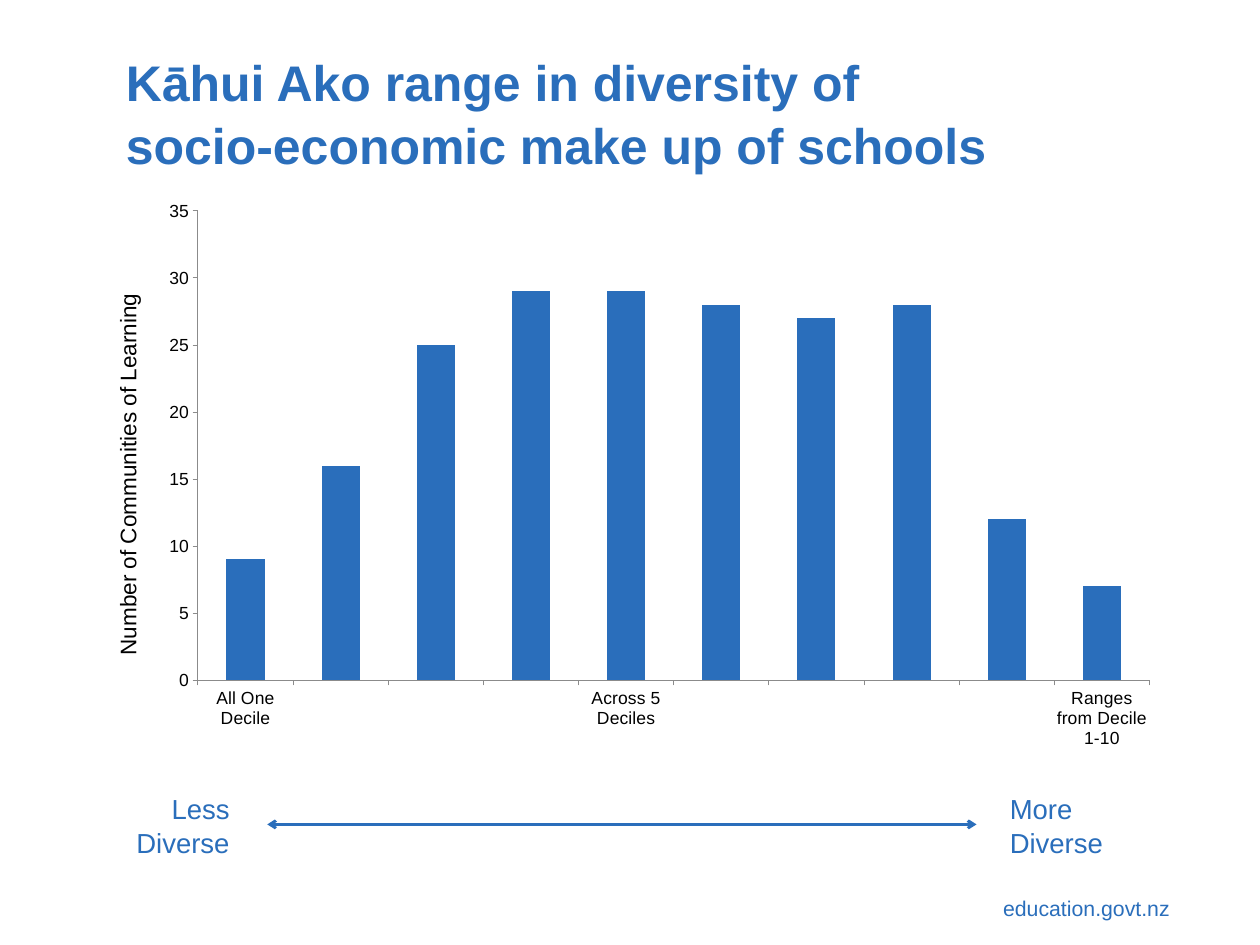
from dataclasses import dataclass

from lxml.etree import SubElement as Sub
from pptx import Presentation
from pptx.chart.data import CategoryChartData as Data
from pptx.dml.color import RGBColor as RGB
from pptx.enum.chart import XL_CHART_TYPE as Kind, XL_TICK_MARK as Tick
from pptx.enum.shapes import MSO_CONNECTOR as Link
from pptx.enum.text import PP_ALIGN as Align
from pptx.oxml import parse_xml
from pptx.oxml.ns import nsdecls, qn
from pptx.util import Inches, Pt

HUES = {"blue": "2A6EBB", "black": "000000", "grey": "8B8B8B"}
FACE = "Arial"


@dataclass
class Label:
    text: str
    box: tuple[float, float, float, float]
    size: int = 22
    align: Align = Align.LEFT
    bold: bool = False
    inset: tuple[float, float] = (0.14, 0.07)


LABELS = [
    Label("education.govt.nz", (9.96, 9.86, 3.18, 0.42), 17, Align.RIGHT),
    Label("More Diverse", (11.08, 8.71, 1.56, 0.9)),
    Label("Less Diverse", (1.29, 8.71, 1.4, 0.9), align=Align.RIGHT),
    Label("Kāhui Ako range in diversity of\nsocio-economic make up of schools",
          (1.3, 0.49, 10.8, 1.45), 40, bold=True, inset=(0.1, 0.05)),
]
VALUES = [9, 16, 25, 29, 29, 28, 27, 28, 12, 7]
NAMES = {0: "All One Decile", 4: "Across 5 Deciles", 9: "Ranges from Decile 1-10"}
PLOT = {"x": 0.09, "y": 0.04, "w": 0.89, "h": 0.79}


def hue(name: str) -> RGB:
    return RGB.from_string(HUES[name])


def style(font, size: int, color: str = "black", bold: bool = False) -> None:
    font.name, font.size, font.bold = FACE, Pt(size), bold
    font.color.rgb = hue(color)


def write(frame, text: str, *, size: int, color: str = "black",
          bold: bool = False, align: Align | None = None,
          pitch: float | None = None) -> None:
    for i, line in enumerate(text.split("\n")):
        para = frame.add_paragraph() if i else frame.paragraphs[0]
        run = para.add_run()
        run.text = line
        style(run.font, size, color, bold)
        if align is not None:
            para.alignment = align
        if pitch is not None:
            para.line_spacing = pitch


def draw_label(slide, label: Label) -> None:
    frame = slide.shapes.add_textbox(*map(Inches, label.box)).text_frame
    frame.word_wrap = True
    side, edge = map(Inches, label.inset)
    frame.margin_left = frame.margin_right = side
    frame.margin_top = frame.margin_bottom = edge
    write(frame, label.text, size=label.size, color="blue", bold=label.bold,
          align=label.align, pitch=1.05)


def draw_arrow(slide, left: float, right: float, top: float) -> None:
    arrow = slide.shapes.add_connector(
        Link.STRAIGHT, *map(Inches, (left, top, right, top)))
    arrow.line.color.rgb = hue("blue")
    arrow.line.width = Pt(2.25)
    props = arrow.line._get_or_add_ln()
    for end in ("a:headEnd", "a:tailEnd"):
        Sub(props, qn(end), type="arrow")
    Sub(arrow._element.spPr, qn("a:effectLst"))


def draw_chart(slide) -> None:
    data = Data()
    data.categories = [NAMES.get(i, "") for i in range(len(VALUES))]
    data.add_series("Series 1", VALUES)
    box = map(Inches, (1.13, 2.08, 11.88, 6.6))
    chart = slide.shapes.add_chart(Kind.COLUMN_CLUSTERED, *box, data).chart
    chart.has_legend = chart.has_title = False
    style(chart.font, 14)

    plot = chart.plots[0]
    plot.gap_width = 150
    plot.vary_by_categories = False
    fill = plot.series[0].format.fill
    fill.solid()
    fill.fore_color.rgb = hue("blue")

    for axis in (chart.category_axis, chart.value_axis):
        axis.has_major_gridlines = False
        axis.major_tick_mark = Tick.OUTSIDE
        axis.minor_tick_mark = Tick.NONE
        axis.format.line.color.rgb = hue("grey")
        axis.format.line.width = Pt(0.75)
    scale = chart.value_axis
    scale.minimum_scale, scale.maximum_scale, scale.major_unit = 0, 35, 5
    write(scale.axis_title.text_frame, "Number of Communities of Learning", size=18)

    area = chart._chartSpace.chart.plotArea
    for old in area.findall(qn("c:layout")):
        area.remove(old)
    parts = '<c:layoutTarget val="inner"/><c:xMode val="edge"/><c:yMode val="edge"/>'
    parts += "".join(f'<c:{key} val="{val}"/>' for key, val in PLOT.items())
    area.insert(0, parse_xml(
        f'<c:layout {nsdecls("c")}><c:manualLayout>{parts}</c:manualLayout></c:layout>'))


def main() -> None:
    """Build the slide on the diversity of schools in Kāhui Ako."""
    deck = Presentation()
    deck.slide_width, deck.slide_height = Inches(14), Inches(10.5)
    slide = deck.slides.add_slide(deck.slide_layouts[6])
    draw_arrow(slide, 2.97, 10.85, 9.16)
    for label in LABELS:
        draw_label(slide, label)
    draw_chart(slide)
    deck.save("out.pptx")


if __name__ == "__main__":
    main()
